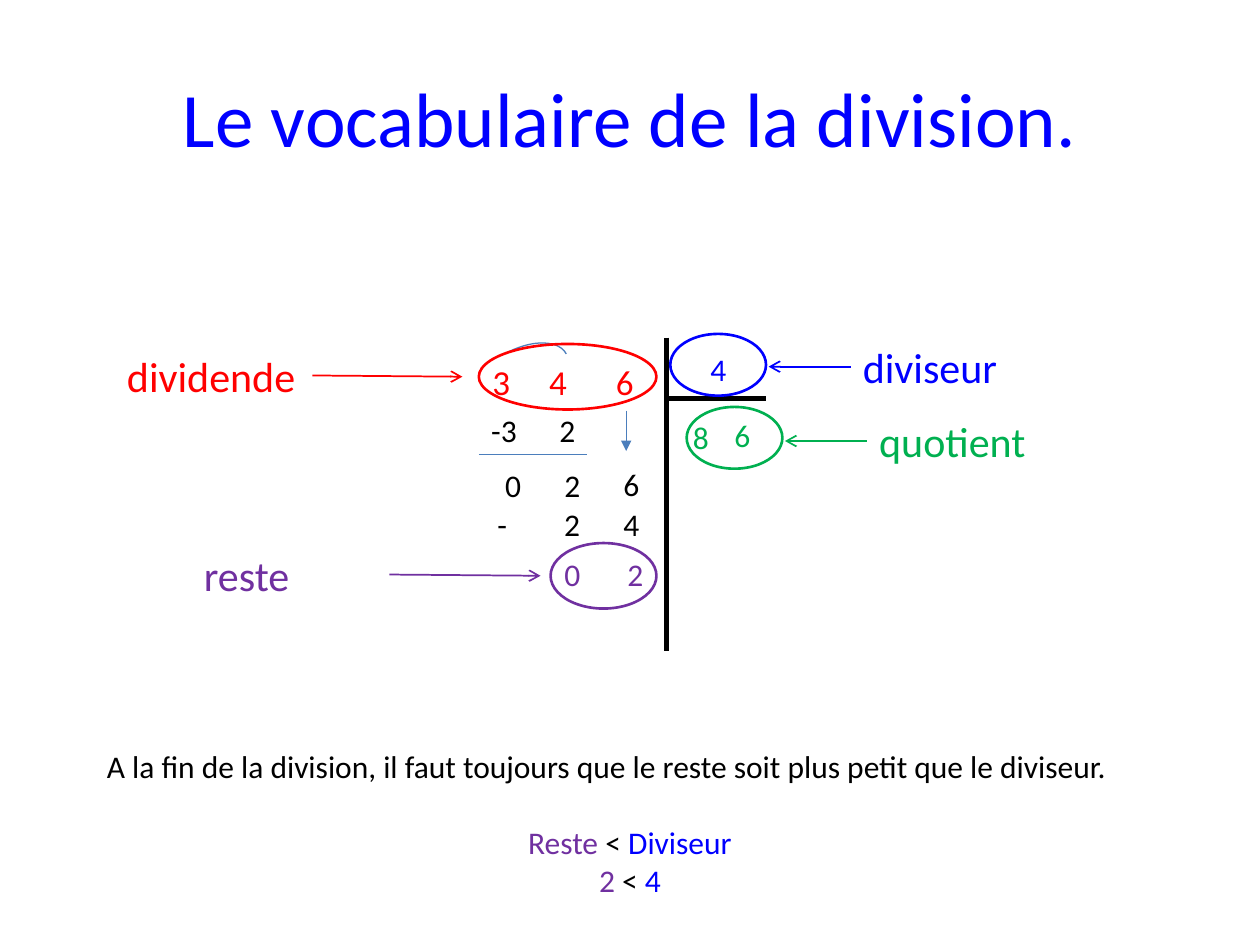
from dataclasses import dataclass
from typing import Optional

from pptx import Presentation
from pptx.dml.color import RGBColor
from pptx.enum.shapes import MSO_CONNECTOR, MSO_SHAPE
from pptx.enum.text import MSO_ANCHOR, PP_ALIGN
from pptx.oxml.ns import qn
from pptx.util import Inches, Pt
from lxml.etree import SubElement


@dataclass(frozen=True)
class Theme:
    font: str = "Calibri"
    black: str = "000000"
    red: str = "FF0000"
    blue: str = "0000FF"
    green: str = "00B050"
    purple: str = "7030A0"
    guide: str = "4B7EBC"
    title: int = 44
    label: int = 24
    dividend: int = 20
    body: int = 18
    bar: float = 3
    ring: float = 1.5
    arrow: float = 1
    thin: float = 0.75


@dataclass(frozen=True)
class Box:
    col: float
    row: float
    cols: float
    rows: float


@dataclass(frozen=True)
class Digits:
    text: str
    box: Box
    color: str
    size: int
    tabs: tuple[float, ...] = ()


@dataclass(frozen=True)
class Term:
    word: str
    label: Box
    side: int
    tip: tuple[float, float]
    ring: Box
    color: str


T = Theme()
COLS, ROWS = 100, 75
SLIDE_W, SLIDE_H = Inches(10), Inches(7.5)
TOP, LEFT, RIGHT = 0, 1, 3
LABEL_COLS, LABEL_ROWS, DIGIT_ROWS = 15.7, 5, 4

DIGITS = [
    Digits("3\t4\t6", Box(38.1, 28.1, 14.1, DIGIT_ROWS), T.red, T.dividend, (4.5, 9.8)),
    Digits("4", Box(55.4, 27.3, 5.4, DIGIT_ROWS), T.blue, T.body),
    Digits("8", Box(54, 32.7, 6.8, DIGIT_ROWS), T.green, T.body),
    Digits("6", Box(57.3, 32.5, 5.4, DIGIT_ROWS), T.green, T.body),
    Digits("-3\t2", Box(38, 32.1, 9.8, DIGIT_ROWS), T.black, T.body, (5.4,)),
    Digits("0\t2", Box(39.1, 36.5, 9.2, DIGIT_ROWS), T.black, T.body, (4.7,)),
    Digits("6", Box(48.5, 36.4, 5.4, DIGIT_ROWS), T.black, T.body),
    Digits("-\t2\t4", Box(38.5, 39.6, 13.6, DIGIT_ROWS), T.black, T.body, (5.3, 10)),
    Digits("0\t2", Box(43.8, 43.6, 9.2, DIGIT_ROWS), T.purple, T.body, (5,)),
]

TERMS = [
    Term("dividende", Box(9.1, 27.3, LABEL_COLS, LABEL_ROWS), RIGHT, (36.7, 29.9),
         Box(38, 27.3, 14.1, 5.2), T.red),
    Term("diviseur", Box(67.5, 26.6, LABEL_COLS, LABEL_ROWS), LEFT, (61, 29.1),
         Box(53.2, 26.5, 7.6, 4.9), T.blue),
    Term("quotient", Box(68.8, 32.5, LABEL_COLS, LABEL_ROWS), LEFT, (62.3, 35),
         Box(54.5, 32.3, 7.6, 4.9), T.green),
    Term("reste", Box(15.2, 43.1, LABEL_COLS, LABEL_ROWS), RIGHT, (42.9, 45.7),
         Box(43.7, 43.1, 8.4, 5.2), T.purple),
]


def x(cols: float) -> int:
    return round(SLIDE_W * cols / COLS)


def y(rows: float) -> int:
    return round(SLIDE_H * rows / ROWS)


def place(b: Box) -> tuple[int, int, int, int]:
    return x(b.col), y(b.row), x(b.cols), y(b.rows)


def add_box(s, b: Box):
    sp = s.shapes.add_textbox(*place(b))
    sp.text_frame.word_wrap = True
    return sp


def add_run(p, text: str, color: str, size: int) -> None:
    r = p.add_run()
    r.text = text
    r.font.name = T.font
    r.font.size = Pt(size)
    r.font.color.rgb = RGBColor.from_string(color)


def add_text(s, b: Box, text: str, color: str, size: int):
    sp = add_box(s, b)
    add_run(sp.text_frame.paragraphs[0], text, color, size)
    return sp


def add_digits(s, d: Digits) -> None:
    sp = add_text(s, d.box, d.text, d.color, d.size)
    if d.tabs:
        pPr = sp.text_frame.paragraphs[0]._p.get_or_add_pPr()
        tabs = SubElement(pPr, qn("a:tabLst"))
        for stop in d.tabs:
            SubElement(tabs, qn("a:tab"), pos=str(x(stop)), algn="l")


def add_line(s, start: tuple[float, float], end: tuple[float, float], color: str,
             width: float, head: Optional[str] = None):
    c = s.shapes.add_connector(MSO_CONNECTOR.STRAIGHT, x(start[0]), y(start[1]),
                               x(end[0]), y(end[1]))
    c.line.color.rgb = RGBColor.from_string(color)
    c.line.width = Pt(width)
    if head:
        SubElement(c.line._get_or_add_ln(), qn("a:tailEnd"), type=head)
    SubElement(c._element.spPr, qn("a:effectLst"))
    return c


def add_outline(s, kind: MSO_SHAPE, b: Box, color: str, width: float, turn: float = 0) -> None:
    sp = s.shapes.add_shape(kind, *place(b))
    sp.shadow.inherit = False
    sp.fill.background()
    sp.line.color.rgb = RGBColor.from_string(color)
    sp.line.width = Pt(width)
    sp.rotation = turn


def add_term(s, t: Term) -> None:
    sp = add_text(s, t.label, t.word, t.color, T.label)
    c = add_line(s, t.tip, t.tip, t.color, T.arrow, "arrow")
    c.begin_connect(sp, t.side)
    add_outline(s, MSO_SHAPE.OVAL, t.ring, t.color, T.ring)


def add_rule(s) -> None:
    tf = add_box(s, Box(7.5, 58.8, 85, 13.1)).text_frame
    lines = [
        (PP_ALIGN.JUSTIFY, 0, [("A la fin de la division, il faut toujours que le reste "
                                "soit plus petit que le diviseur.", T.black)]),
        (PP_ALIGN.CENTER, 22, [("Reste", T.purple), (" < ", T.black), ("Diviseur", T.blue)]),
        (PP_ALIGN.CENTER, 0, [("2 ", T.purple), ("<", T.black), (" 4", T.blue)]),
    ]
    for i, (align, gap, runs) in enumerate(lines):
        p = tf.add_paragraph() if i else tf.paragraphs[0]
        p.alignment = align
        p.space_before = Pt(gap)
        for text, color in runs:
            add_run(p, text, color, T.body)


def main() -> None:
    prs = Presentation()
    prs.slide_width, prs.slide_height = SLIDE_W, SLIDE_H
    s = prs.slides.add_slide(prs.slide_layouts[6])

    title = add_text(s, Box(5, 3, 90, 12.5), "Le vocabulaire de la division.", T.blue, T.title)
    title.text_frame.vertical_anchor = MSO_ANCHOR.MIDDLE
    title.text_frame.paragraphs[0].alignment = PP_ALIGN.CENTER

    add_line(s, (52.9, 26.8), (52.9, 51.7), T.black, T.bar)
    add_line(s, (52.9, 31.6), (60.8, 31.6), T.black, T.bar)
    add_line(s, (38, 36.1), (46.6, 36.1), T.guide, T.thin)
    add_line(s, (49.7, 32.6), (49.7, 35.8), T.guide, T.thin, "triangle")
    add_outline(s, MSO_SHAPE.ARC, Box(37.3, 27.7, 8.1, 4.5), T.guide, T.thin, 332.6)

    for d in DIGITS:
        add_digits(s, d)
    for t in TERMS:
        add_term(s, t)
    add_rule(s)
    prs.save("out.pptx")


if __name__ == "__main__":
    main()
